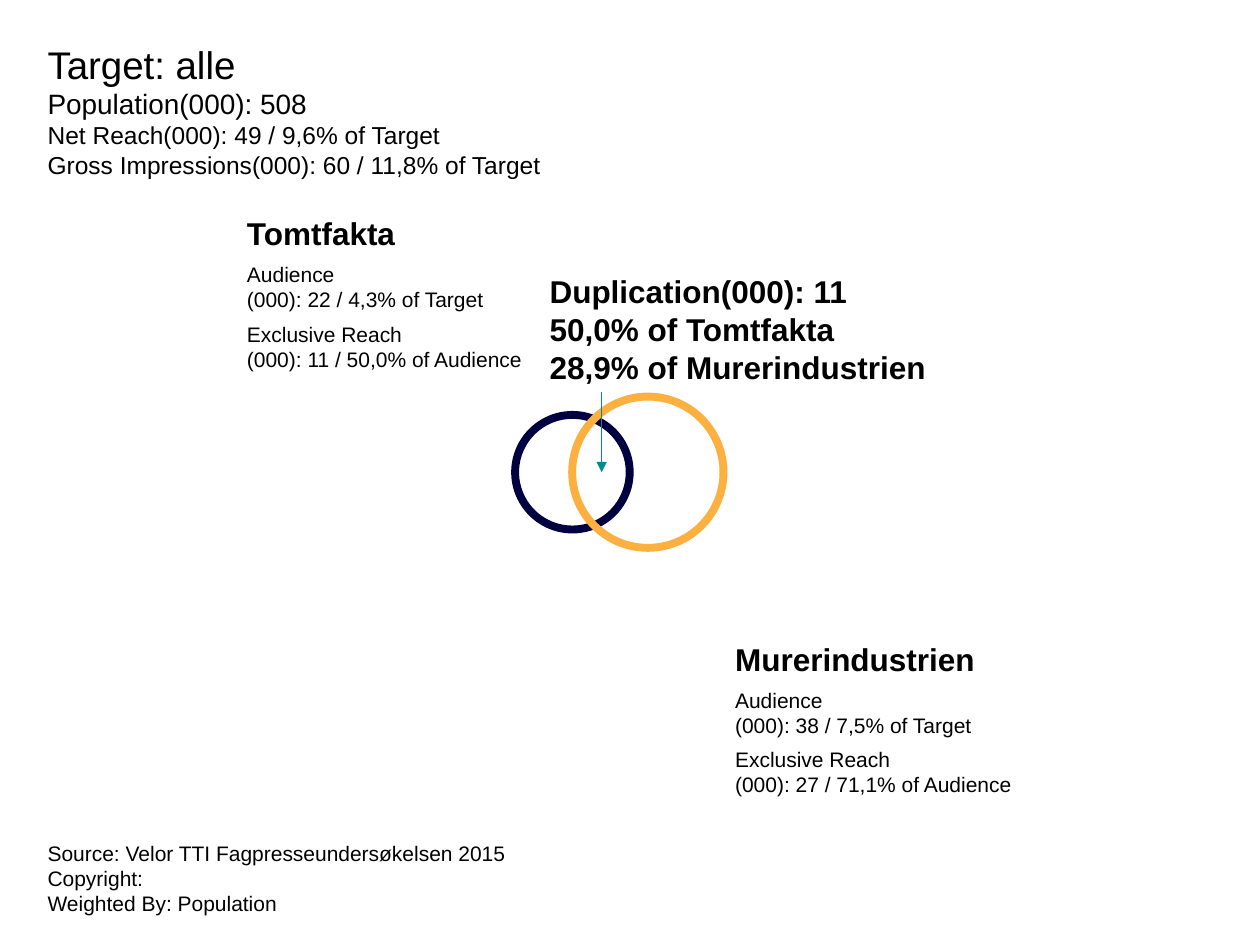
from lxml import etree
from pptx import Presentation
from pptx import util as u
from pptx.dml.color import RGBColor
from pptx.enum import shapes, text
from pptx.oxml.ns import qn

COLORS = {"text": "000000", "navy": "000040", "orange": "FBB040", "teal": "008B91"}
FONT = "Arial"

# Text boxes: lines, (left, top, width, height) in cm, point size, bold
MARGIN, FULL_WIDTH = 0.71, 24.69
PAGE_TEXTS = [
    (["Target: alle"], (MARGIN, 0.71, FULL_WIDTH, 1.19), 22, False),
    (["Population(000): 508"], (MARGIN, 1.63, FULL_WIDTH, 0.94), 16, False),
    (["Net Reach(000): 49 / 9,6% of Target"], (MARGIN, 2.29, FULL_WIDTH, 0.86), 14, False),
    (["Gross Impressions(000): 60 / 11,8% of Target"], (MARGIN, 2.9, FULL_WIDTH, 0.86), 14, False),
    (["Source: Velor TTI Fagpresseundersøkelsen 2015", "Copyright:", "Weighted By: Population"],
     (MARGIN, 16.82, FULL_WIDTH, 1.8), 12, False),
    (["Duplication(000): 11", "50,0% of Tomtfakta", "28,9% of Murerindustrien"],
     (10.83, 5.36, 14.58, 2.57), 18, True),
]

# Each publication has a text block and a circle on the common centre line
PUBLICATIONS = [
    {"name": "Tomtfakta", "audience": "(000): 22 / 4,3% of Target",
     "exclusive": "(000): 11 / 50,0% of Audience", "block": (4.73, 4.19),
     "center": 11.54, "diameter": 2.31, "color": "navy"},
    {"name": "Murerindustrien", "audience": "(000): 38 / 7,5% of Target",
     "exclusive": "(000): 27 / 71,1% of Audience", "block": (14.57, 12.77),
     "center": 13.06, "diameter": 3.05, "color": "orange"},
]
BLOCK_WIDTH = 14.12
CENTER_LINE = 9.52
ARROW_X, ARROW_TOP = 12.13, 7.9


def rgb(name):
    return RGBColor.from_string(COLORS[name])


def add_text(slide, lines, box, size, bold):
    frame = slide.shapes.add_textbox(*map(u.Cm, box)).text_frame
    frame.word_wrap = True
    frame.auto_size = text.MSO_AUTO_SIZE.SHAPE_TO_FIT_TEXT
    font_format = {"name": FONT, "size": u.Pt(size), "bold": bold}
    for index, line in enumerate(lines):
        paragraph = frame.add_paragraph() if index else frame.paragraphs[0]
        run = paragraph.add_run()
        run.text = line
        for attribute, value in font_format.items():
            setattr(run.font, attribute, value)
        run.font.color.rgb = rgb("text")


def add_publication_text(slide, publication):
    left, top = publication["block"]
    parts = [
        ([publication["name"]], 0, 1.02, 18, True),
        (["Audience", publication["audience"]], 0.96, 1.3, 12, False),
        (["Exclusive Reach", publication["exclusive"]], 2.16, 1.3, 12, False),
    ]
    for lines, offset, height, size, bold in parts:
        add_text(slide, lines, (left, top + offset, BLOCK_WIDTH, height), size, bold)


def add_circle(slide, publication):
    diameter = publication["diameter"]
    box = (publication["center"] - diameter / 2, CENTER_LINE - diameter / 2, diameter, diameter)
    circle = slide.shapes.add_shape(shapes.MSO_SHAPE.OVAL, *map(u.Cm, box))
    circle.shadow.inherit = False
    circle.fill.background()
    circle.line.color.rgb = rgb(publication["color"])
    circle.line.width = u.Pt(4.5)


def add_duplication_arrow(slide):
    points = (ARROW_X, ARROW_TOP, ARROW_X, CENTER_LINE)
    arrow = slide.shapes.add_connector(shapes.MSO_CONNECTOR.STRAIGHT, *map(u.Cm, points))
    arrow.line.color.rgb = rgb("teal")
    arrow.line.width = u.Pt(0.75)
    etree.SubElement(arrow.line._get_or_add_ln(), qn("a:tailEnd"), type="triangle")
    etree.SubElement(arrow._element.spPr, qn("a:effectLst"))


def main():
    presentation = Presentation()
    presentation.slide_width, presentation.slide_height = u.Cm(25.4), u.Cm(19.05)
    slide = presentation.slides.add_slide(presentation.slide_layouts[6])
    for publication in PUBLICATIONS:
        add_circle(slide, publication)
        add_publication_text(slide, publication)
    for page_text in PAGE_TEXTS:
        add_text(slide, *page_text)
    add_duplication_arrow(slide)
    presentation.save("out.pptx")


if __name__ == "__main__":
    main()
